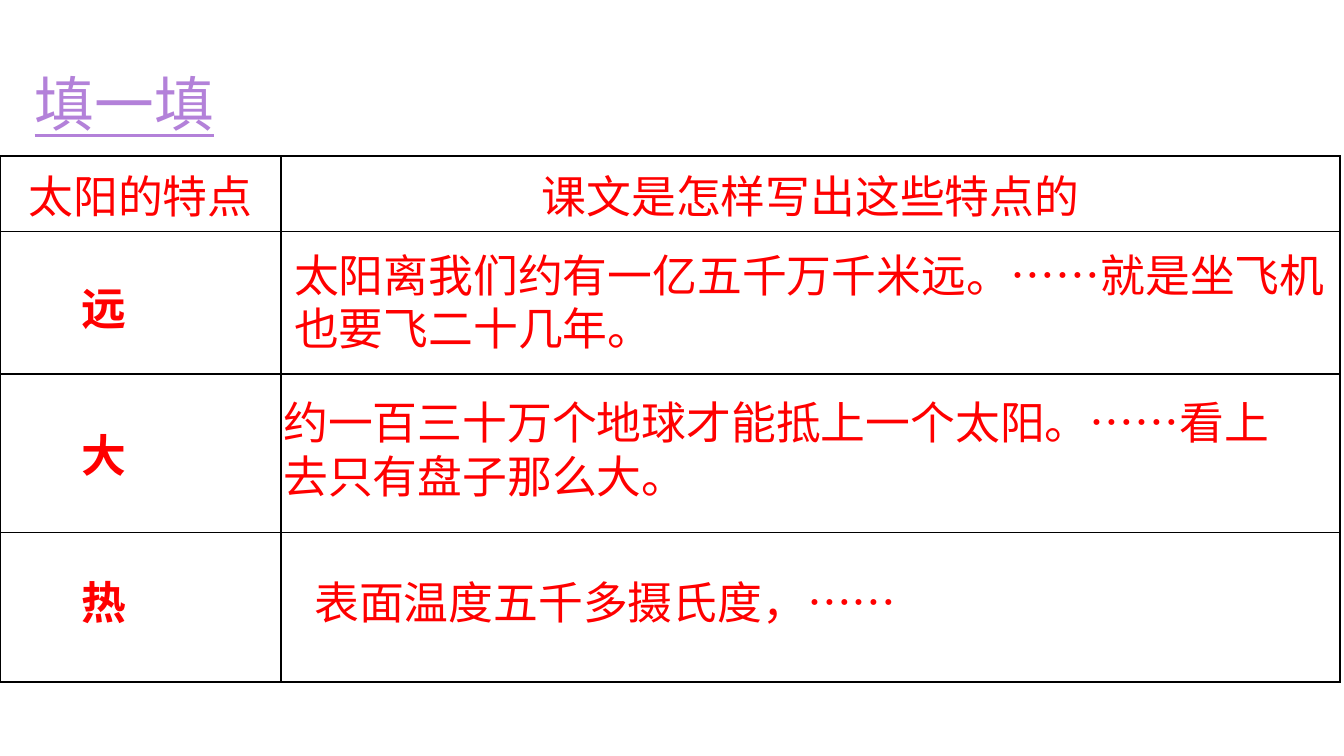
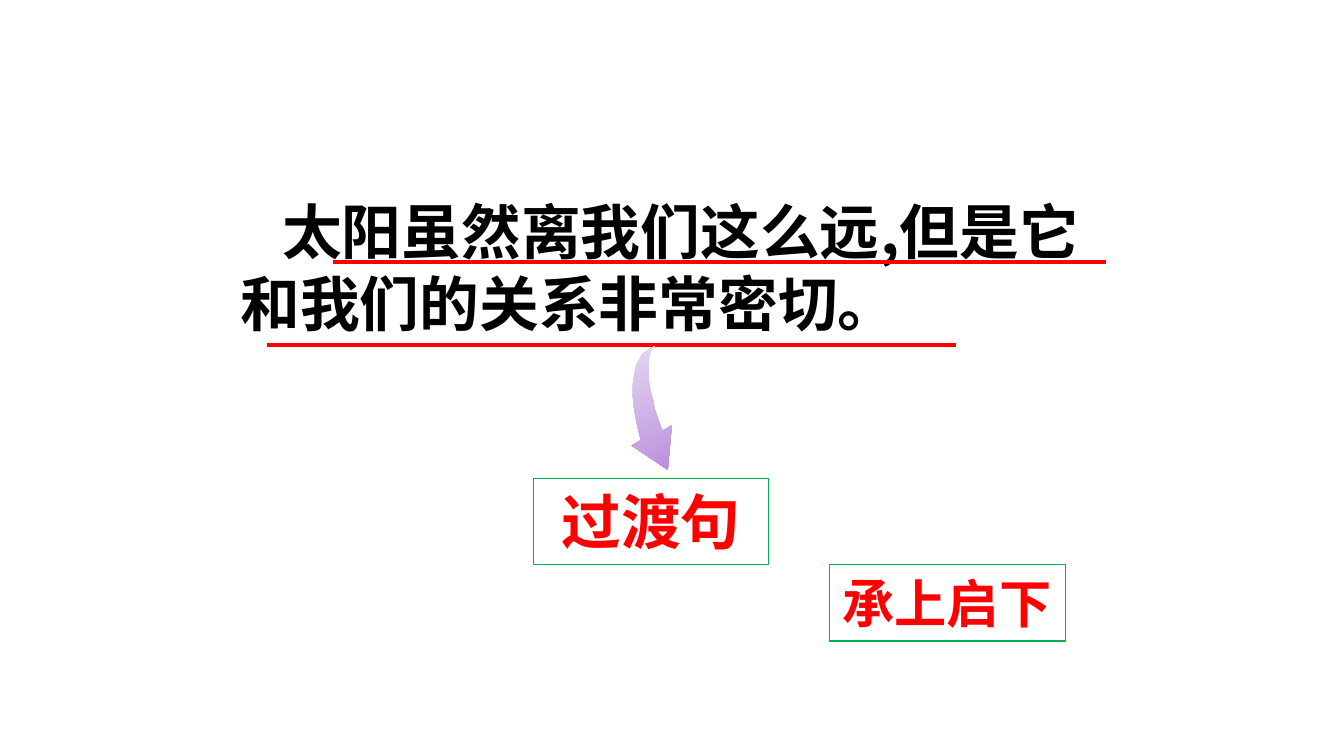
import math
import pptx
import pptx.dml.color
import pptx.enum.shapes
import pptx.enum.text
import pptx.oxml.ns
import pptx.util
from lxml import etree

# Shared style
FONT = "Noto Sans CJK SC"
RED, BLACK, GREEN = "FF0000", "000000", "00B050"
LILAC, PALE = "B381D9", "EAE1F4"
WIDE = 10
HIGH = WIDE * 9 / 16
ALIGN = pptx.enum.text.PP_ALIGN
ANCHOR = pptx.enum.text.MSO_ANCHOR

# Slide 1 content
TITLE = "填一填"
HEADS = ["太阳的特点", "课文是怎样写出这些特点的"]
COLS = [2.09, 7.88]
ROWS = [0.51, 1.06, 1.18, 1.11]
TABLE_TOP = 1.16
TRAITS = [("远", 2.04, 1.18), ("大", 3.13, 1.1), ("热", 4.23, 1.26)]
TRAIT_LEFT = 0.51
QUOTES = [
    ("太阳离我们约有一亿五千万千米远。……就是坐飞机也要飞二十几年。", (2.09, 1.79, 7.91, 0.91)),
    ("约一百三十万个地球才能抵上一个太阳。……看上去只有盘子那么大。", (2.01, 2.89, 7.68, 0.91)),
    ("表面温度五千多摄氏度，……", (2.24, 4.23, 7.76, 0.5)),
]

# Slide 2 content
LINK = "太阳虽然离我们这么远,但是它和我们的关系非常密切。"
LABELS = [
    ("过渡句", (3.97, 3.56, 1.75, 0.64), 32, ALIGN.CENTER, True),
    ("承上启下", (6.17, 4.2, 1.76, 0.57), 28, ALIGN.LEFT, False),
]
LOWER, UPPER = (1.99, 7.11, 2.57), (2.48, 8.23, 1.95)
TURN, PIVOT = 64, (4.85, 3.07)
ARROW = [
    (4.87, 2.57), (4.82, 2.6), (4.78, 2.63), (4.75, 2.68), (4.73, 2.73),
    (4.72, 2.79), (4.71, 2.86), (4.71, 2.95), (4.72, 3.04), (4.74, 3.15),
    (4.77, 3.27), (4.7, 3.31), (4.97, 3.49), (5, 3.16), (4.93, 3.2),
    (4.91, 3.15), (4.89, 3.09), (4.87, 3.03), (4.86, 2.97), (4.84, 2.9),
    (4.83, 2.84), (4.83, 2.72), (4.83, 2.66), (4.84, 2.62), (4.85, 2.59),
    (4.87, 2.58),
]


def inch(*nums):
    return [pptx.util.Inches(n) for n in nums]


def paint(code):
    return pptx.dml.color.RGBColor.from_string(code)


def tag(root, name, **attrs):
    return etree.SubElement(root, pptx.oxml.ns.qn(name), attrs)


def write(frame, text, size, color=RED, bold=False, align=ALIGN.LEFT, under=False):
    para = frame.paragraphs[0]
    para.text = text
    para.alignment = align
    font = para.font
    font.name, font.size, font.bold = FONT, pptx.util.Pt(size), bold
    font.underline = under
    font.color.rgb = paint(color)
    props = para._p.pPr.find(pptx.oxml.ns.qn("a:defRPr"))
    tag(props, "a:ea", typeface=FONT)
    return para


def fit(frame, wrap=True):
    frame.word_wrap = wrap
    frame.auto_size = pptx.enum.text.MSO_AUTO_SIZE.SHAPE_TO_FIT_TEXT
    frame.vertical_anchor = ANCHOR.TOP


def add_text(slide, text, box, size=24, **style):
    frame = slide.shapes.add_textbox(*inch(*box)).text_frame
    fit(frame)
    return write(frame, text, size, **style)


def add_label(slide, text, box, size, align, wrap):
    kind = pptx.enum.shapes.MSO_SHAPE.RECTANGLE
    shape = slide.shapes.add_shape(kind, *inch(*box))
    shape.shadow.inherit = False
    shape.fill.background()
    shape.line.color.rgb = paint(GREEN)
    shape.line.width = pptx.util.Pt(0.75)
    fit(shape.text_frame, wrap)
    write(shape.text_frame, text, size, bold=True, align=align)


def add_rule(slide, left, right, y):
    kind = pptx.enum.shapes.MSO_CONNECTOR.STRAIGHT
    rule = slide.shapes.add_connector(kind, *inch(left, y, right, y))
    rule.line.color.rgb = paint(RED)
    rule.line.width = pptx.util.Pt(2)
    tag(rule._element.spPr, "a:effectLst")


def add_arrow(slide):
    # Lay the outline flat, then turn the finished shape
    cos, sin = math.cos(math.radians(TURN)), math.sin(math.radians(TURN))
    flat = []
    for x, y in ARROW:
        dx, dy = x - PIVOT[0], y - PIVOT[1]
        flat.append(inch(PIVOT[0] + dx * cos + dy * sin, PIVOT[1] + dy * cos - dx * sin))
    pen = slide.shapes.build_freeform(*flat[0])
    pen.add_line_segments(flat[1:])
    arrow = pen.convert_to_shape()
    arrow.rotation = TURN
    arrow.shadow.inherit = False
    arrow.line.fill.background()
    arrow.fill.gradient()
    arrow.fill.gradient_angle = 0
    for stop, color in zip(arrow.fill.gradient_stops, (PALE, LILAC)):
        stop.color.rgb = paint(color)


def edge(cell):
    props = cell._tc.get_or_add_tcPr()
    for spot, side in enumerate("LRTB"):
        line = tag(props, f"a:ln{side}", w=str(pptx.util.Pt(1)))
        tag(tag(line, "a:solidFill"), "a:srgbClr", val=BLACK)
        props.insert(spot, line)


def add_grid(slide):
    box = inch(0, TABLE_TOP, sum(COLS), sum(ROWS))
    table = slide.shapes.add_table(len(ROWS), len(COLS), *box).table
    table.first_row = table.horz_banding = False
    for col, width in zip(table.columns, inch(*COLS)):
        col.width = width
    for row, height in zip(table.rows, inch(*ROWS)):
        row.height = height
    for cell in table.iter_cells():
        cell.fill.background()
        cell.margin_top = cell.margin_bottom = pptx.util.Inches(0.04)
        cell.vertical_anchor = ANCHOR.MIDDLE
        edge(cell)
    for spot, head in enumerate(HEADS):
        write(table.cell(0, spot).text_frame, head, 24, align=ALIGN.CENTER)


def main():
    deck = pptx.Presentation()
    deck.slide_width, deck.slide_height = inch(WIDE, HIGH)
    blank = deck.slide_layouts[6]

    # Slide 1: table of traits
    slide = deck.slides.add_slide(blank)
    add_grid(slide)
    for text, box in QUOTES:
        add_text(slide, text, box)
    for text, top, width in TRAITS:
        add_text(slide, text, (TRAIT_LEFT, top, width, 0.5), bold=True)
    add_text(slide, TITLE, (0.16, 0.45, 1.85, 0.64), 32, color=LILAC, under=True)

    # Slide 2: linking sentence
    slide = deck.slides.add_slide(blank)
    para = add_text(slide, LINK, (1.69, 1.4, 6.69, 1.18), 32, color=BLACK, bold=True)
    para._p.pPr.set("indent", str(pptx.util.Inches(0.31)))
    for label in LABELS:
        add_label(slide, *label)
    add_rule(slide, *LOWER)
    add_arrow(slide)
    add_rule(slide, *UPPER)

    deck.save("out.pptx")


if __name__ == "__main__":
    main()
